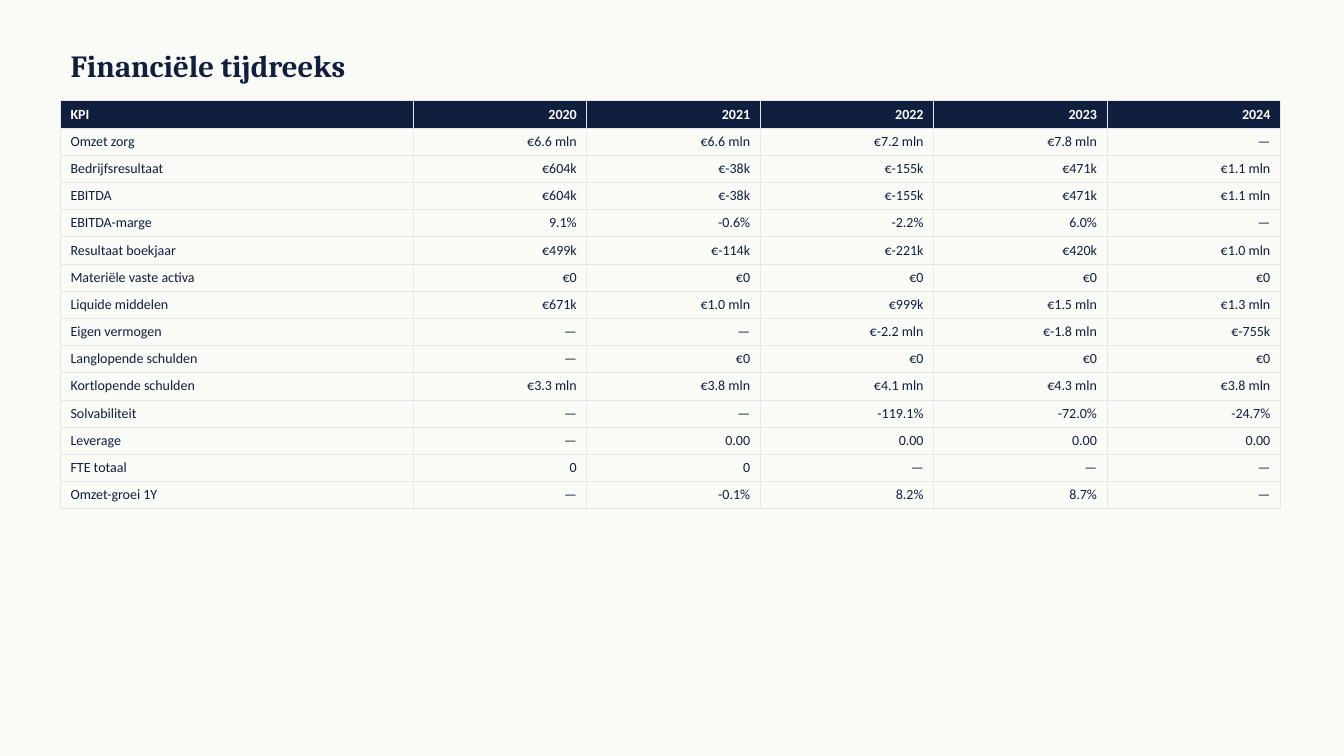
from lxml import etree
from pptx import Presentation
from pptx.dml.color import RGBColor
from pptx.enum.text import MSO_ANCHOR, PP_ALIGN
from pptx.oxml.ns import qn
from pptx.util import Inches, Pt

LEFT, RIGHT = PP_ALIGN.LEFT, PP_ALIGN.RIGHT
MIDDLE = MSO_ANCHOR.MIDDLE

# Content
TITLE = "Financiële tijdreeks"
ROWS = [
    ("KPI", "2020", "2021", "2022", "2023", "2024"),
    ("Omzet zorg", "€6.6 mln", "€6.6 mln", "€7.2 mln", "€7.8 mln", "—"),
    ("Bedrijfsresultaat", "€604k", "€-38k", "€-155k", "€471k", "€1.1 mln"),
    ("EBITDA", "€604k", "€-38k", "€-155k", "€471k", "€1.1 mln"),
    ("EBITDA-marge", "9.1%", "-0.6%", "-2.2%", "6.0%", "—"),
    ("Resultaat boekjaar", "€499k", "€-114k", "€-221k", "€420k", "€1.0 mln"),
    ("Materiële vaste activa", "€0", "€0", "€0", "€0", "€0"),
    ("Liquide middelen", "€671k", "€1.0 mln", "€999k", "€1.5 mln", "€1.3 mln"),
    ("Eigen vermogen", "—", "—", "€-2.2 mln", "€-1.8 mln", "€-755k"),
    ("Langlopende schulden", "—", "€0", "€0", "€0", "€0"),
    ("Kortlopende schulden", "€3.3 mln", "€3.8 mln", "€4.1 mln", "€4.3 mln", "€3.8 mln"),
    ("Solvabiliteit", "—", "—", "-119.1%", "-72.0%", "-24.7%"),
    ("Leverage", "—", "0.00", "0.00", "0.00", "0.00"),
    ("FTE totaal", "0", "0", "—", "—", "—"),
    ("Omzet-groei 1Y", "—", "-0.1%", "8.2%", "8.7%", "—"),
]
NAVY, WHITE, PAPER, GRID = "0F1F3D", "FFFFFF", "FAFAF7", "E5E7EB"
COL_WIDTHS = [3.5] + [1.72] * 5
ROW_HEIGHT = 0.27


def color(value):
    return RGBColor.from_string(value)


def style(p, font, size, value, bold, align):
    p.alignment = align
    p.font.name, p.font.size, p.font.bold = font, Pt(size), bold
    p.font.color.rgb = color(value)


def add_borders(cell, value, width):
    tcPr = cell._tc.get_or_add_tcPr()
    for i, side in enumerate(("lnL", "lnR", "lnT", "lnB")):
        ln = etree.Element(qn(f"a:{side}"), w=str(Pt(width)))
        fill = etree.SubElement(ln, qn("a:solidFill"))
        etree.SubElement(fill, qn("a:srgbClr"), val=value)
        tcPr.insert(i, ln)


prs = Presentation()
prs.slide_width, prs.slide_height = Inches(13.33), Inches(7.5)
s = prs.slides.add_slide(prs.slide_layouts[5])
s.background.fill.solid()
s.background.fill.fore_color.rgb = color(PAPER)

# Title
title = s.shapes.title
title.left, title.top = Inches(0.6), Inches(0.4)
title.width, title.height = Inches(12), Inches(0.5)
tf = title.text_frame
tf.text = TITLE
tf.vertical_anchor = MIDDLE
style(tf.paragraphs[0], "Cambria", 22, NAVY, True, LEFT)

# KPI table
table = s.shapes.add_table(
    len(ROWS), len(COL_WIDTHS), Inches(0.6), Inches(1),
    Inches(sum(COL_WIDTHS)), Inches(ROW_HEIGHT * len(ROWS))).table
table.horz_banding = False
for column, width in zip(table.columns, COL_WIDTHS):
    column.width = Inches(width)

for r, values in enumerate(ROWS):
    header = r == 0
    table.rows[r].height = Inches(ROW_HEIGHT)
    for c, value in enumerate(values):
        cell = table.cell(r, c)
        cell.text = value
        style(cell.text_frame.paragraphs[0], "Calibri", 10,
              WHITE if header else NAVY, header, RIGHT if c else LEFT)
        if header:
            cell.fill.solid()
            cell.fill.fore_color.rgb = color(NAVY)
        else:
            cell.fill.background()
        add_borders(cell, GRID, 0.5)

prs.save("out.pptx")
